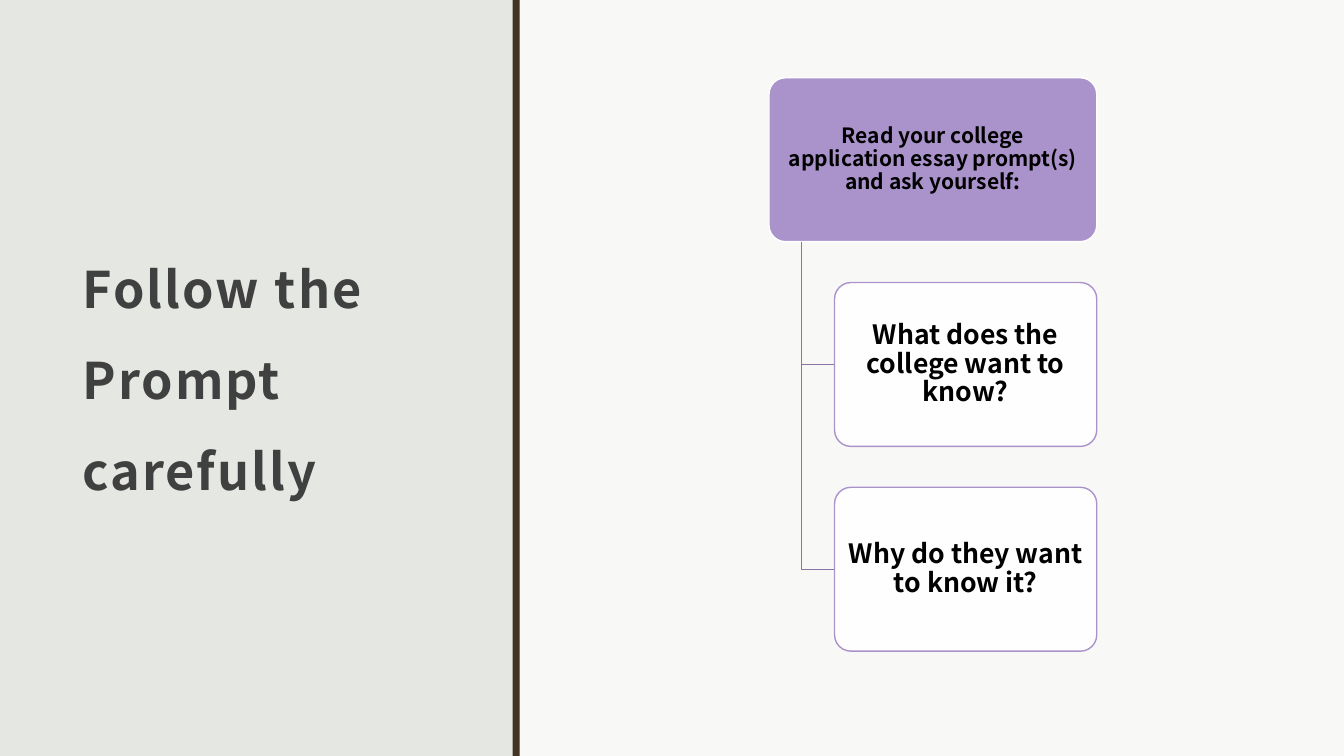
import pptx
import pptx.dml.color
import pptx.enum.shapes
import pptx.enum.text
import pptx.oxml.ns
import pptx.util
from lxml import etree
from pptx.util import Cm

WIDTH, HEIGHT = 33.87, 19.05


def color(hex_text):
    return pptx.dml.color.RGBColor.from_string(hex_text)


def set_values(target, values):
    """Set each attribute of target named in the dict."""
    for name, value in values.items():
        setattr(target, name, value)


class PromptSlide:
    font_name = "Noto Sans CJK JP"
    shapes_enum = pptx.enum.shapes.MSO_SHAPE
    align_enum = pptx.enum.text.PP_ALIGN

    def __init__(self, presentation, background):
        self.slide = presentation.slides.add_slide(presentation.slide_layouts[5])
        fill = self.slide.background.fill
        fill.solid()
        fill.fore_color.rgb = color(background)

    def put_text(self, shape, text, size, hex_text, align, line_spacing, insets):
        """Fill a shape with one bold paragraph and return its run."""
        frame = shape.text_frame
        frame.text = text
        set_values(frame, {
            "word_wrap": True,
            "auto_size": pptx.enum.text.MSO_AUTO_SIZE.NONE,
            "vertical_anchor": pptx.enum.text.MSO_ANCHOR.MIDDLE,
            "margin_left": Cm(insets[0]), "margin_right": Cm(insets[0]),
            "margin_top": Cm(insets[1]), "margin_bottom": Cm(insets[1]),
        })
        paragraph = frame.paragraphs[0]
        set_values(paragraph, {"alignment": align, "line_spacing": line_spacing})
        run = paragraph.runs[0]
        set_values(run.font, {"name": self.font_name, "size": pptx.util.Pt(size), "bold": True})
        run.font.color.rgb = color(hex_text)
        return run

    def title(self, text, left, top, width, height):
        shape = self.slide.shapes.title
        set_values(shape, {"left": Cm(left), "top": Cm(top),
                           "width": Cm(width), "height": Cm(height)})
        run = self.put_text(shape, text, 36, "404040", self.align_enum.LEFT, 1.5, (0.3, 0.28))
        run.font._element.set("spc", "150")

    def block(self, kind, left, top, width, height, fill, opacity=100, line=None):
        shape = self.slide.shapes.add_shape(kind, Cm(left), Cm(top), Cm(width), Cm(height))
        shape.shadow.inherit = False
        shape.fill.solid()
        shape.fill.fore_color.rgb = color(fill)
        if opacity < 100:
            fill_color = shape._element.spPr.find(".//" + pptx.oxml.ns.qn("a:srgbClr"))
            alpha = etree.SubElement(fill_color, pptx.oxml.ns.qn("a:alpha"))
            alpha.set("val", str(opacity * 1000))
        if line:
            self.outline(shape, line)
        else:
            shape.line.fill.background()
        return shape

    def outline(self, shape, hex_text):
        shape.line.color.rgb = color(hex_text)
        shape.line.width = pptx.util.Pt(1)

    def card(self, text, size, left, top, width, height, **style):
        shape = self.block(self.shapes_enum.ROUNDED_RECTANGLE, left, top, width, height, **style)
        shape.adjustments[0] = 0.1
        self.put_text(shape, text, size, "000000", self.align_enum.CENTER, 0.9, (0.22, 0.18))

    def branch(self, trunk_x, start_y, end_x, end_y):
        """Draw an open elbow down the trunk and across to a card."""
        builder = self.slide.shapes.build_freeform(Cm(trunk_x), Cm(start_y))
        builder.add_line_segments(
            [(Cm(trunk_x), Cm(end_y)), (Cm(end_x), Cm(end_y))], close=False)
        shape = builder.convert_to_shape()
        shape.shadow.inherit = False
        shape.fill.background()
        self.outline(shape, "8875A3")


def main():
    presentation = pptx.Presentation()
    set_values(presentation, {"slide_width": Cm(WIDTH), "slide_height": Cm(HEIGHT)})
    prompt = PromptSlide(presentation, "E5E8E2")

    rectangle = prompt.shapes_enum.RECTANGLE
    panel_left, divider_width = 13.1, 0.18
    prompt.block(rectangle, panel_left, 0, WIDTH - panel_left, HEIGHT, "FFFFFF", opacity=75)
    prompt.block(rectangle, panel_left - divider_width, 0, divider_width, HEIGHT, "413424")

    top = 1.96
    prompt.title("Follow the Prompt carefully", 1.78, top, 9.47, 14.43)

    root_left, root_width, card_height, pitch = 19.38, 8.26, 4.13, 5.16
    indent = root_width / 5
    trunk_x, question_left = root_left + indent / 2, root_left + indent
    prompt.card("Read your college application essay prompt(s) and ask yourself:", 15,
                root_left, top, root_width, card_height, fill="AA92CB", line="FFFFFF")

    questions = ["What does the college want to know?", "Why do they want to know it?"]
    for level, question in enumerate(questions, start=1):
        question_top = top + level * pitch
        prompt.branch(trunk_x, top + card_height, question_left, question_top + card_height / 2)
        prompt.card(question, 19, question_left, question_top, root_width - indent, card_height,
                    fill="FFFFFF", opacity=90, line="AA92CB")

    presentation.save("out.pptx")


if __name__ == "__main__":
    main()
